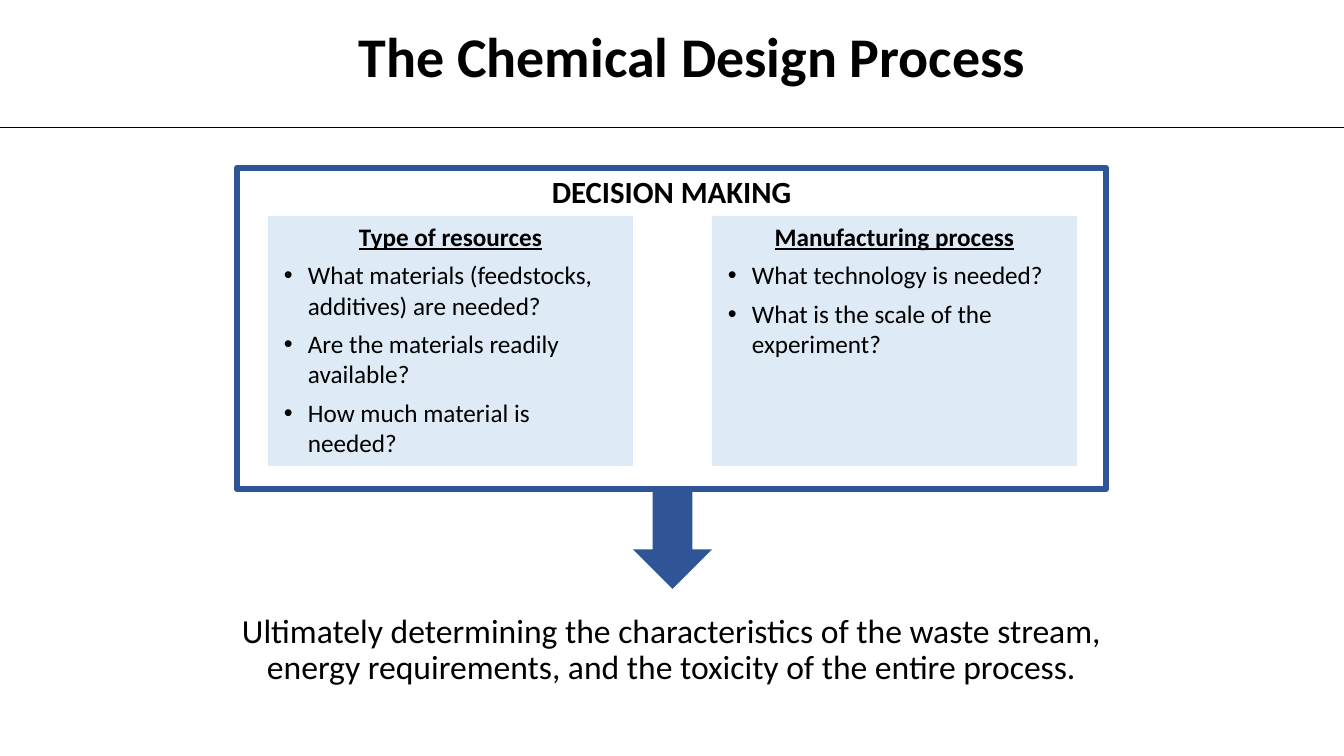
from lxml import etree
from pptx import Presentation
from pptx import util as u
from pptx.dml.color import RGBColor
from pptx.enum import shapes, text
from pptx.oxml.ns import qn

PX = 12192000 / 1344
BLACK, WHITE, BLUE, PALE = "000000", "FFFFFF", "2F5597", "DEEBF7"
CENTER, LEFT = text.PP_ALIGN.CENTER, text.PP_ALIGN.LEFT


def px(*lengths):
    return [u.Emu(round(length * PX)) for length in lengths]


def write(frame, lines, size, bold=False, spacing=1.0, anchor=text.MSO_ANCHOR.TOP):
    for key, value in {"word_wrap": True, "vertical_anchor": anchor,
                       "auto_size": text.MSO_AUTO_SIZE.NONE}.items():
        setattr(frame, key, value)
    for i, line in enumerate(lines):
        paragraph = frame.paragraphs[0] if i == 0 else frame.add_paragraph()
        paragraph.text = line
        paragraph.alignment = LEFT if i else CENTER
        paragraph.line_spacing = spacing
        paragraph.space_before = u.Pt(6 if i else 0)
        if i:
            indent, hang = px(30, -24)
            properties = paragraph._p.get_or_add_pPr()
            properties.set("marL", str(indent))
            properties.set("indent", str(hang))
            etree.SubElement(properties, qn("a:buFont")).set("typeface", "Arial")
            etree.SubElement(properties, qn("a:buChar")).set("char", "•")
        for key, value in {"name": "Calibri", "size": u.Pt(size), "bold": bold and i == 0,
                           "underline": len(lines) > 1 and i == 0}.items():
            setattr(paragraph.font, key, value)
        paragraph.font.color.rgb = RGBColor.from_string(BLACK)


deck = Presentation()
deck.slide_width, deck.slide_height = px(1344, 756)
slide = deck.slides.add_slide(deck.slide_layouts[5])

title = slide.shapes.title
title.left, title.top, title.width, title.height = px(300, 23, 744, 72)
write(title.text_frame, ["The Chemical Design Process"], 40, True, 0.9, text.MSO_ANCHOR.MIDDLE)
title.text_frame.paragraphs[0]._p.get_or_add_pPr().set("marL", str(px(40)[0]))

outcome = slide.shapes.add_textbox(*px(228, 609, 887, 84))
write(outcome.text_frame, ["Ultimately determining the characteristics of the waste stream, "
                           "energy requirements, and the toxicity of the entire process."],
      24, spacing=0.9)

RECT, ARROW = shapes.MSO_SHAPE.RECTANGLE, shapes.MSO_SHAPE.DOWN_ARROW
parts = [
    (RECT, (237, 168, 869, 321), WHITE, 22, ["DECISION MAKING"]),
    (RECT, (268, 216, 365, 250), PALE, 18, [
        "Type of resources",
        "What materials (feedstocks, additives) are needed?",
        "Are the materials readily available?",
        "How much material is needed?"]),
    (RECT, (712, 216, 365, 250), PALE, 18, [
        "Manufacturing process",
        "What technology is needed?",
        "What is the scale of the experiment?"]),
    (ARROW, (633, 491, 79, 98), BLUE, 18, []),
]
for preset, place, fill, size, lines in parts:
    part = slide.shapes.add_shape(preset, *px(*place))
    part.shadow.inherit = False
    part.fill.solid()
    part.fill.fore_color.rgb = RGBColor.from_string(fill)
    if fill == WHITE:
        part.line.color.rgb = RGBColor.from_string(BLUE)
        part.line.width = u.Pt(4.5)
    else:
        part.line.fill.background()
    write(part.text_frame, lines, size, True)

divider = slide.shapes.add_connector(shapes.MSO_CONNECTOR.STRAIGHT, *px(0, 127, 1344, 127))
divider.line.color.rgb = RGBColor.from_string(BLACK)
divider.line.width = u.Pt(0.5)
etree.SubElement(divider._element.spPr, qn("a:effectLst"))

deck.save("out.pptx")
